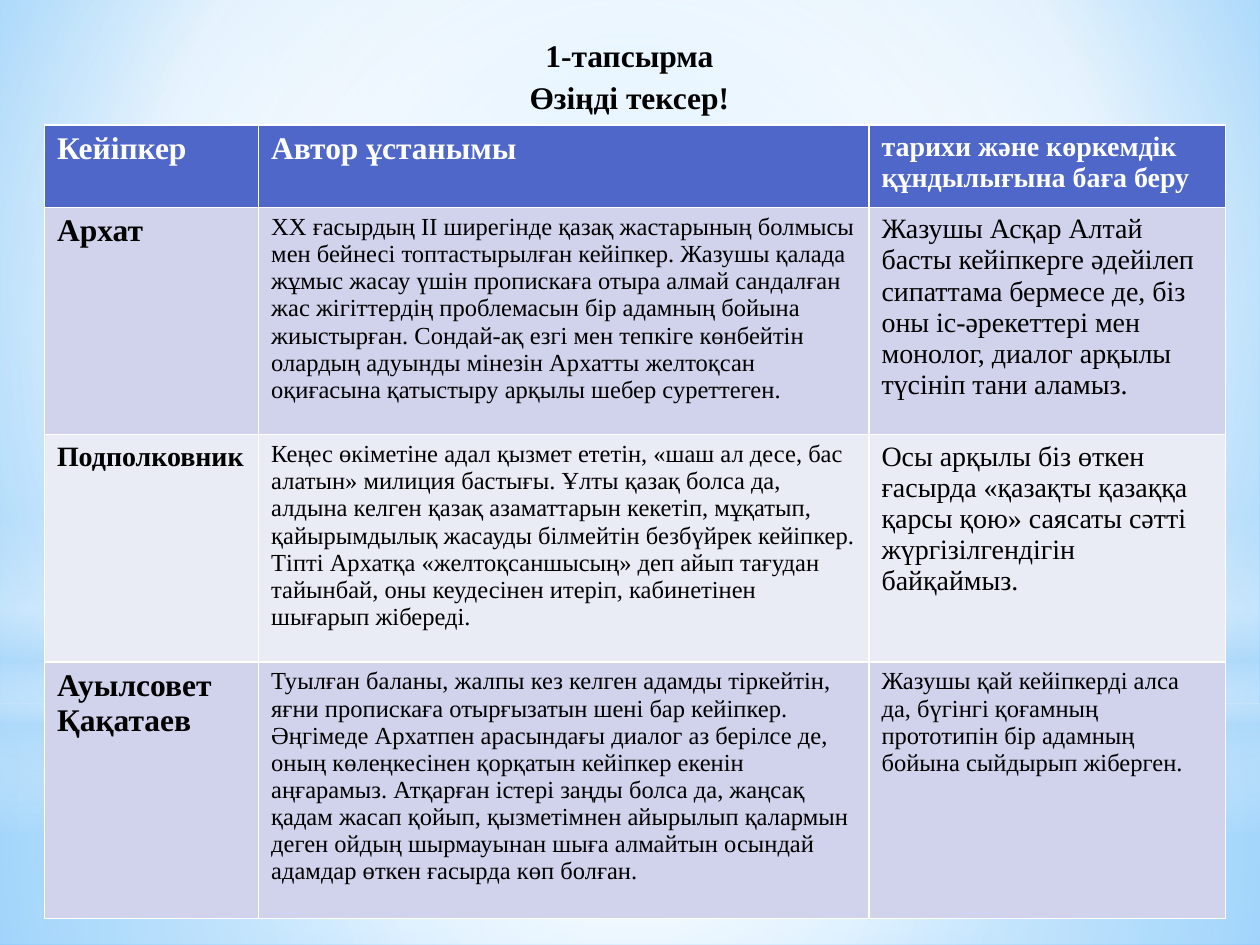
from lxml import etree
from pptx import Presentation
from pptx.dml.color import RGBColor
from pptx.enum import shapes, text
from pptx.oxml.ns import qn
from pptx.util import Pt

FONT = "Times New Roman"
BLACK = RGBColor(0x00, 0x00, 0x00)
WHITE = RGBColor(0xFF, 0xFF, 0xFF)
HEADER_BLUE = RGBColor(0x4E, 0x67, 0xC8)
BAND_DARK = RGBColor(0xD0, 0xD3, 0xEB)
BAND_LIGHT = RGBColor(0xE9, 0xEB, 0xF5)
SKY = RGBColor(0x9E, 0xD5, 0xFF)
DEEP_SKY = RGBColor(0x5B, 0xB9, 0xFF)
MIST = RGBColor(0xB4, 0xDC, 0xFA)


def set_gradient(fill, owner, stops, center=None):
    """Stops are (position, colour, opacity) in percent; center is the
    left, top, right, bottom inset of a circular gradient, None is top-down."""
    fill.gradient()
    gradient = owner.find(".//" + qn("a:gradFill"))
    for child in list(gradient):
        gradient.remove(child)
    stop_list = etree.SubElement(gradient, qn("a:gsLst"))
    for position, color, opacity in stops:
        stop = etree.SubElement(stop_list, qn("a:gs"), pos=str(position * 1000))
        color_element = etree.SubElement(stop, qn("a:srgbClr"), val=str(color))
        etree.SubElement(color_element, qn("a:alpha"), val=str(opacity * 1000))
    if center is None:
        etree.SubElement(gradient, qn("a:lin"), ang="5400000", scaled="0")
    else:
        circle = etree.SubElement(gradient, qn("a:path"))
        circle.set("path", "circle")
        insets = {side: str(inset * 1000) for side, inset in zip("ltrb", center)}
        etree.SubElement(circle, qn("a:fillToRect"), insets)


def add_text(paragraph, words, size, bold, color):
    run = paragraph.add_run()
    run.text = words
    run.font.name = FONT
    run.font.size = Pt(size)
    run.font.bold = bold
    run.font.color.rgb = color


presentation = Presentation()
presentation.slide_width = Pt(720)
presentation.slide_height = Pt(540)
slide = presentation.slides.add_slide(presentation.slide_layouts[6])

# Sky background with soft layers of light
set_gradient(slide.background.fill, slide.element,
             [(0, SKY, 100), (60, WHITE, 100), (100, DEEP_SKY, 100)], (20, 10, 20, 60))

RECTANGLE = shapes.MSO_SHAPE.RECTANGLE
MIDDLE = (50, 50, 50, 50)
layers = [
    (RECTANGLE, 401.8, 138.2, [(0, WHITE, 91), (37, WHITE, 76), (100, MIST, 79)], MIDDLE),
    (RECTANGLE, 0, 401.8, [(0, WHITE, 89), (48, WHITE, 62), (100, MIST, 79)], MIDDLE),
    (RECTANGLE, 296.6, 180, [(0, WHITE, 0), (29, WHITE, 30), (45, MIST, 40),
                             (55, WHITE, 26), (65, MIST, 60), (100, WHITE, 0)], None),
    (shapes.MSO_SHAPE.OVAL, 126, 401.8, [(0, WHITE, 100), (56, WHITE, 0)], MIDDLE),
]
for kind, top, height, stops, center in layers:
    layer = slide.shapes.add_shape(kind, 0, Pt(top), presentation.slide_width, Pt(height))
    layer.shadow.inherit = False
    layer.line.fill.background()
    set_gradient(layer.fill, layer.element, stops, center)

# Title
title = slide.shapes.add_textbox(Pt(31), Pt(15), Pt(657.4), Pt(82))
title.text_frame.word_wrap = True
title.text_frame.vertical_anchor = text.MSO_ANCHOR.TOP
paragraph = title.text_frame.paragraphs[0]
paragraph.alignment = text.PP_ALIGN.CENTER
paragraph.line_spacing = 1.1
add_text(paragraph, "1-тапсырма", 18, True, BLACK)
paragraph.add_line_break()
add_text(paragraph, "Өзіңді тексер!", 18, True, BLACK)

# Table: each cell is (text, size)
rows = [
    [("Кейіпкер", 18), ("Автор ұстанымы", 18),
     ("тарихи және көркемдік құндылығына баға беру", 16)],
    [("Архат", 18),
     ("ХХ ғасырдың ІІ ширегінде қазақ жастарының болмысы мен бейнесі топтастырылған "
      "кейіпкер. Жазушы қалада жұмыс жасау үшін пропискаға отыра алмай сандалған жас "
      "жігіттердің проблемасын бір адамның бойына жиыстырған. Сондай-ақ езгі мен тепкіге "
      "көнбейтін олардың адуынды мінезін Архатты желтоқсан оқиғасына қатыстыру арқылы "
      "шебер суреттеген.", 14),
     ("Жазушы Асқар Алтай басты кейіпкерге әдейілеп сипаттама бермесе де, біз оны "
      "іс-әрекеттері мен монолог, диалог арқылы түсініп тани аламыз.", 16)],
    [("Подполковник", 16),
     ("Кеңес өкіметіне адал қызмет ететін, «шаш ал десе, бас алатын» милиция бастығы. "
      "Ұлты қазақ болса да, алдына келген қазақ азаматтарын кекетіп, мұқатып, "
      "қайырымдылық жасауды білмейтін безбүйрек кейіпкер. Тіпті Архатқа "
      "«желтоқсаншысың» деп айып тағудан тайынбай, оны кеудесінен итеріп, кабинетінен "
      "шығарып жібереді.", 14),
     ("Осы арқылы біз өткен ғасырда «қазақты қазаққа қарсы қою» саясаты сәтті "
      "жүргізілгендігін байқаймыз.", 16)],
    [("Ауылсовет Қақатаев", 18),
     ("Туылған баланы, жалпы кез келген адамды тіркейтін, яғни пропискаға отырғызатын "
      "шені бар кейіпкер. Әңгімеде Архатпен арасындағы диалог аз берілсе де, оның "
      "көлеңкесінен қорқатын кейіпкер екенін аңғарамыз. Атқарған істері заңды болса да, "
      "жаңсақ қадам жасап қойып, қызметімнен айырылып қалармын деген ойдың шырмауынан "
      "шыға алмайтын осындай адамдар өткен ғасырда көп болған.", 14),
     ("Жазушы қай кейіпкерді алса да, бүгінгі қоғамның прототипін бір адамның бойына "
      "сыйдырып жіберген.", 14)],
]
column_widths = [122.4, 348.8, 203.6]
row_heights = [47.2, 129.8, 129.8, 146.8]
row_fills = [HEADER_BLUE, BAND_DARK, BAND_LIGHT, BAND_DARK]

table = slide.shapes.add_table(len(rows), len(column_widths), Pt(25.4), Pt(71.4),
                               Pt(sum(column_widths)), Pt(sum(row_heights))).table
for column, width in zip(table.columns, column_widths):
    column.width = Pt(width)
for row_index, row in enumerate(rows):
    table.rows[row_index].height = Pt(row_heights[row_index])
    is_header = row_index == 0
    for column_index, (words, size) in enumerate(row):
        cell = table.cell(row_index, column_index)
        cell.fill.solid()
        cell.fill.fore_color.rgb = row_fills[row_index]
        add_text(cell.text_frame.paragraphs[0], words, size,
                 is_header or column_index == 0, WHITE if is_header else BLACK)

presentation.save("out.pptx")
